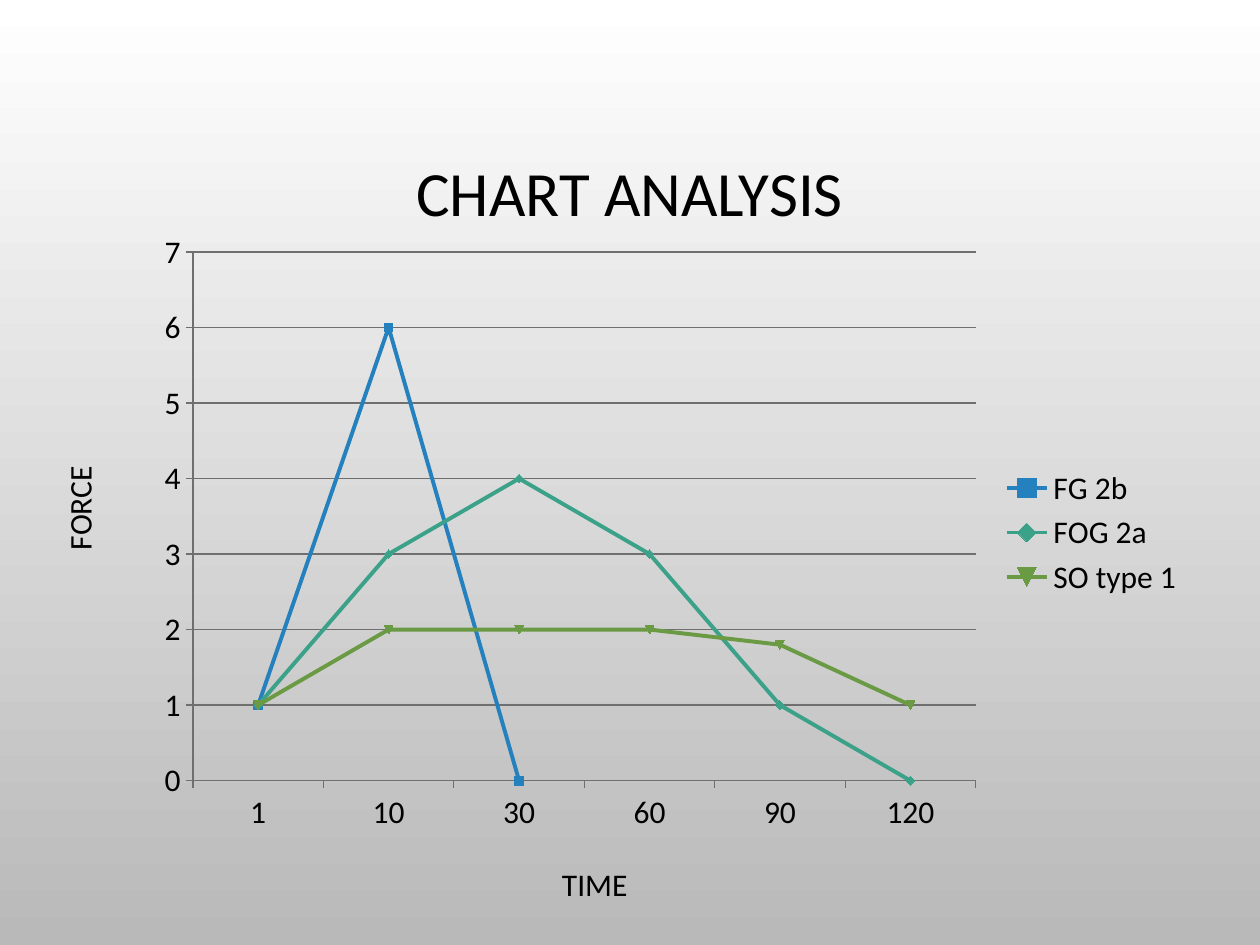
from dataclasses import dataclass
from typing import Optional

from lxml.etree import SubElement
from pptx import Presentation
from pptx.chart.chart import Chart
from pptx.chart.data import CategoryChartData
from pptx.dml.color import RGBColor
from pptx.enum.chart import XL_CHART_TYPE, XL_LEGEND_POSITION, XL_TICK_MARK
from pptx.enum.text import MSO_ANCHOR, MSO_AUTO_SIZE, PP_ALIGN
from pptx.oxml.ns import qn
from pptx.slide import Slide
from pptx.text.text import Font
from pptx.util import Cm, Pt


@dataclass(frozen=True)
class Theme:
    font: str = "Calibri"
    title_size: int = 36
    label_size: int = 18
    text: str = "000000"
    grid: str = "6F6F6F"
    background: tuple = ("FFFFFF", "B9B9B9")


@dataclass(frozen=True)
class Box:
    left: float
    top: float
    width: float
    height: float

    def lengths(self) -> tuple:
        return Cm(self.left), Cm(self.top), Cm(self.width), Cm(self.height)


@dataclass(frozen=True)
class AxisLabel:
    text: str
    box: Box
    rotation: int = 0


@dataclass(frozen=True)
class ForceSeries:
    name: str
    values: tuple[Optional[float], ...]
    color: str


THEME = Theme()
TITLE_BOX = Box(1.9, 1.73, 21.59, 4.45)
CHART_BOX = Box(2.9, 4.45, 21.23, 12.57)
PLOT_BOX = Box(3.89, 5.08, 15.78, 10.66)
TIMES = ("1", "10", "30", "60", "90", "120")
SERIES = (
    ForceSeries("FG 2b", (1, 6, 0, None, None, None), "2581BE"),
    ForceSeries("FOG 2a", (1, 3, 4, 3, 1, 0), "3BA289"),
    ForceSeries("SO type 1", (1, 2, 2, 2, 1.8, 1), "6A9A43"),
)
AXIS_LABELS = (
    AxisLabel("FORCE", Box(-1.5, 9.73, 6.2, 1.02), 270),
    AxisLabel("TIME", Box(8.89, 17.32, 6.2, 1.02)),
)


def style_font(font: Font, size: int) -> None:
    font.name = THEME.font
    font.size = Pt(size)
    font.color.rgb = RGBColor.from_string(THEME.text)


def paint_background(slide: Slide) -> None:
    fill = slide.background.fill
    fill.gradient()
    fill.gradient_angle = 270
    for stop, color in zip(fill.gradient_stops, THEME.background):
        stop.color.rgb = RGBColor.from_string(color)


def add_title(slide: Slide, text: str) -> None:
    title = slide.shapes.title
    title.left, title.top, title.width, title.height = TITLE_BOX.lengths()
    title.text_frame.text = text
    title.text_frame.vertical_anchor = MSO_ANCHOR.MIDDLE
    paragraph = title.text_frame.paragraphs[0]
    paragraph.alignment = PP_ALIGN.CENTER
    paragraph.line_spacing = 0.9
    style_font(paragraph.font, THEME.title_size)


def add_axis_label(slide: Slide, label: AxisLabel) -> None:
    shape = slide.shapes.add_textbox(*label.box.lengths())
    shape.rotation = label.rotation
    frame = shape.text_frame
    frame.word_wrap = True
    frame.auto_size = MSO_AUTO_SIZE.SHAPE_TO_FIT_TEXT
    frame.text = label.text
    paragraph = frame.paragraphs[0]
    paragraph.alignment = PP_ALIGN.CENTER
    style_font(paragraph.font, THEME.label_size)


def place_plot(chart: Chart) -> None:
    """Fix the inner plot area as fractions of the chart frame."""
    plot_area = chart.plots[0]._element.getparent()
    layout = plot_area.find(qn("c:layout"))
    if layout is None:
        layout = SubElement(plot_area, qn("c:layout"))
        plot_area.insert(0, layout)
    manual = SubElement(layout, qn("c:manualLayout"))
    settings = {
        "layoutTarget": "inner",
        "xMode": "edge",
        "yMode": "edge",
        "x": (PLOT_BOX.left - CHART_BOX.left) / CHART_BOX.width,
        "y": (PLOT_BOX.top - CHART_BOX.top) / CHART_BOX.height,
        "w": PLOT_BOX.width / CHART_BOX.width,
        "h": PLOT_BOX.height / CHART_BOX.height,
    }
    for name, value in settings.items():
        SubElement(manual, qn(f"c:{name}")).set("val", str(value))


def add_force_chart(slide: Slide) -> None:
    data = CategoryChartData()
    data.categories = TIMES
    for item in SERIES:
        data.add_series(item.name, item.values)
    chart = slide.shapes.add_chart(
        XL_CHART_TYPE.LINE_MARKERS, *CHART_BOX.lengths(), data
    ).chart
    style_font(chart.font, THEME.label_size)
    chart.has_title = False
    chart.has_legend = True
    chart.legend.position = XL_LEGEND_POSITION.RIGHT
    chart.legend.include_in_layout = False
    chart.plots[0].vary_by_categories = False
    place_plot(chart)

    # Axes and grid
    value_axis = chart.value_axis
    value_axis.minimum_scale, value_axis.maximum_scale = 0, 7
    value_axis.major_unit = 1
    value_axis.has_major_gridlines = True
    for axis in (chart.category_axis, value_axis):
        axis.major_tick_mark = XL_TICK_MARK.OUTSIDE
        axis.minor_tick_mark = XL_TICK_MARK.NONE
    for part in (chart.category_axis, value_axis, value_axis.major_gridlines):
        part.format.line.color.rgb = RGBColor.from_string(THEME.grid)
        part.format.line.width = Pt(0.75)

    # Lines and markers
    for series, item in zip(chart.plots[0].series, SERIES):
        color = RGBColor.from_string(item.color)
        series.smooth = False
        series.format.line.color.rgb = color
        series.format.line.width = Pt(2.25)
        series.marker.size = 5
        series.marker.format.fill.solid()
        series.marker.format.fill.fore_color.rgb = color
        series.marker.format.line.color.rgb = color


def main() -> None:
    presentation = Presentation()
    presentation.slide_width, presentation.slide_height = Cm(25.4), Cm(19.05)
    slide = presentation.slides.add_slide(presentation.slide_layouts[5])
    paint_background(slide)
    add_title(slide, "CHART ANALYSIS")
    add_force_chart(slide)
    for label in AXIS_LABELS:
        add_axis_label(slide, label)
    presentation.save("out.pptx")


if __name__ == "__main__":
    main()
